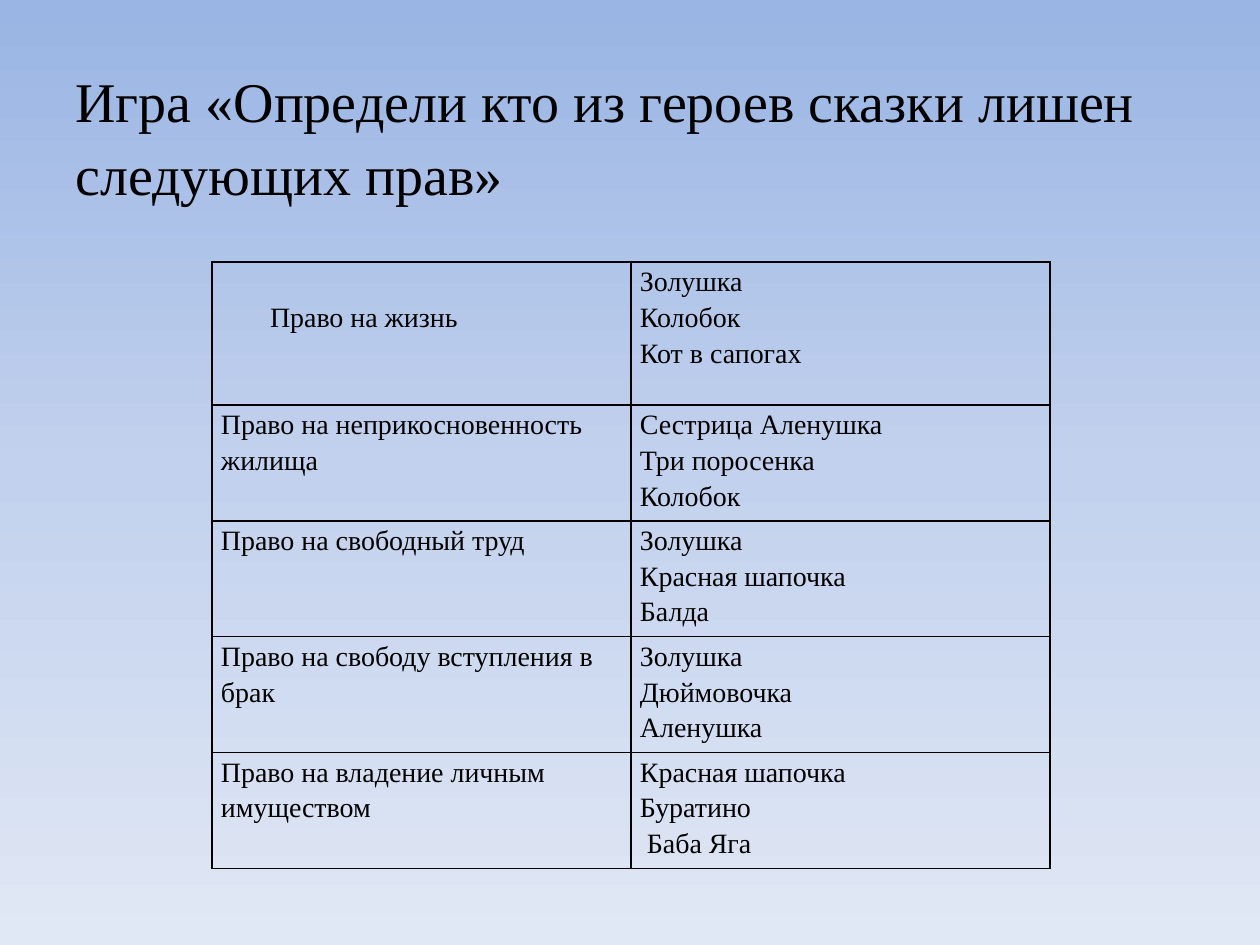
import copy

import pptx
import pptx.dml.color
import pptx.oxml
import pptx.oxml.ns
import pptx.util

PX = 914400 // 126
BLACK = pptx.dml.color.RGBColor(0x00, 0x00, 0x00)
SKY_COLOURS = [
    pptx.dml.color.RGBColor(0x9A, 0xB5, 0xE4),
    pptx.dml.color.RGBColor(0xC2, 0xD1, 0xED),
    pptx.dml.color.RGBColor(0xE1, 0xE8, 0xF5),
]
FONT = "Times New Roman"
RIGHTS = [
    ("Право на жизнь", ["Золушка", "Колобок", "Кот в сапогах"]),
    ("Право на неприкосновенность жилища", ["Сестрица Аленушка", "Три поросенка", "Колобок"]),
    ("Право на свободный труд", ["Золушка", "Красная шапочка", "Балда"]),
    ("Право на свободу вступления в брак", ["Золушка", "Дюймовочка", "Аленушка"]),
    ("Право на владение личным имуществом", ["Красная шапочка", "Буратино", " Баба Яга"]),
]


def format_text(text_frame, size, line_spacing):
    for paragraph in text_frame.paragraphs:
        paragraph.line_spacing = line_spacing
        for run in paragraph.runs:
            run.font.name = FONT
            run.font.size = pptx.util.Pt(size)
            run.font.color.rgb = BLACK


def add_borders(cell):
    properties = cell._tc.get_or_add_tcPr()
    for position, side in enumerate(("lnL", "lnR", "lnT", "lnB")):
        properties.insert(position, pptx.oxml.parse_xml(
            f'<a:{side} {pptx.oxml.ns.nsdecls("a")} w="12700"><a:solidFill>'
            f'<a:srgbClr val="{BLACK}"/></a:solidFill></a:{side}>'))


presentation = pptx.Presentation()
presentation.slide_width = 1260 * PX
presentation.slide_height = 945 * PX
slide = presentation.slides.add_slide(presentation.slide_layouts[6])

# Background: three-stop gradient from top to bottom
background = slide.background.fill
background.gradient()
background.gradient_angle = 270
stop_list = next(slide.element.iter(pptx.oxml.ns.qn("a:gsLst")))
stop_list.insert(1, copy.deepcopy(stop_list[0]))
for index, (stop, colour) in enumerate(zip(background.gradient_stops, SKY_COLOURS)):
    stop.position = index / 2
    stop.color.rgb = colour

# Heading
heading = slide.shapes.add_textbox(63 * PX, 55 * PX, 1134 * PX, 160 * PX)
heading.text_frame.word_wrap = True
heading.text_frame.text = "Игра «Определи кто из героев сказки лишен следующих прав»"
heading.text_frame.paragraphs[0].space_before = pptx.util.Pt(2)
format_text(heading.text_frame, 32, 1.08)

# Table of rights and fairy-tale heroes
table = slide.shapes.add_table(len(RIGHTS), 2, 212 * PX, 262 * PX, 838 * PX, 573 * PX).table
table.first_row = False
table.horz_banding = False
for column in table.columns:
    column.width = 419 * PX
for index, (right, heroes) in enumerate(RIGHTS):
    table.rows[index].height = (143 if index == 0 else 107) * PX
    for cell, text in zip(table.rows[index].cells, (right, "\n".join(heroes))):
        cell.fill.background()
        cell.margin_left = cell.margin_right = 9 * PX
        cell.margin_top = cell.margin_bottom = 0
        cell.text_frame.text = text
        format_text(cell.text_frame, 16, 1.15)
        add_borders(cell)

# The first right is set in and one line down
first_cell = table.cell(0, 0)
first_cell.margin_left = 58 * PX
first_cell.margin_top = 36 * PX

presentation.save("out.pptx")
